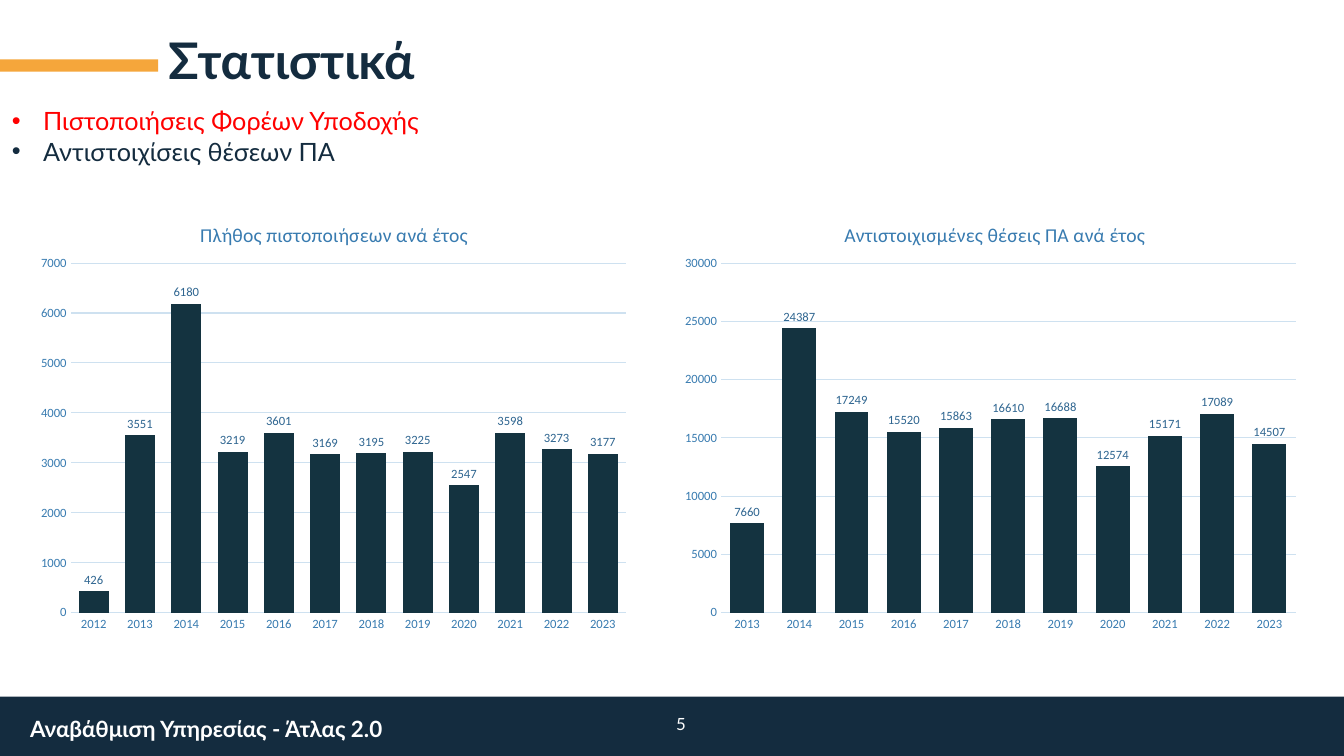
from lxml.etree import SubElement
from pptx import Presentation
from pptx.chart.data import CategoryChartData
from pptx.dml.color import RGBColor
from pptx.enum.chart import XL_CHART_TYPE, XL_LABEL_POSITION, XL_TICK_MARK
from pptx.enum.shapes import MSO_SHAPE
from pptx.enum.text import MSO_ANCHOR, PP_ALIGN
from pptx.oxml import parse_xml
from pptx.oxml.ns import nsdecls, qn
from pptx.util import Inches, Pt

NAVY, ORANGE, WHITE, RED = "142C3F", "F5A63B", "FFFFFF", "FF0000"
BAR, AXIS_TEXT, LABEL_TEXT, GRID = "143340", "387BB0", "2E6590", "CEE1F0"
SLIDE_WIDTH, SLIDE_HEIGHT = 13.33, 7.5

CERTIFICATIONS = [426, 3551, 6180, 3219, 3601, 3169, 3195, 3225, 2547, 3598, 3273, 3177]
MATCHED_POSITIONS = [7660, 24387, 17249, 15520, 15863, 16610, 16688, 12574, 15171, 17089, 14507]


def color(code):
    return RGBColor.from_string(code)


def set_font(font, size, code, name="Lato", bold=False):
    font.size, font.name, font.bold = Pt(size), name, bold
    font.color.rgb = color(code)


def add_bar(page, left, top, width, height, fill):
    bar = page.shapes.add_shape(MSO_SHAPE.RECTANGLE, Inches(left), Inches(top),
                                Inches(width), Inches(height))
    bar.shadow.inherit = False
    bar.fill.solid()
    bar.fill.fore_color.rgb = color(fill)
    bar.line.fill.background()


def write(para, text, size=18, code=NAVY, bold=False, align=PP_ALIGN.LEFT,
          spacing=1.0, bullet=False):
    para.alignment = align
    para.line_spacing = spacing
    if bullet:
        properties = para._p.get_or_add_pPr()
        properties.set("marL", str(Inches(0.31)))
        properties.set("indent", str(-Inches(0.31)))
        SubElement(properties, qn("a:buFont")).set("typeface", "Arial")
        SubElement(properties, qn("a:buChar")).set("char", "•")
    span = para.add_run()
    span.text = text
    set_font(span.font, size, code, bold=bold)


def add_text_frame(page, left, top, width, height, anchor=MSO_ANCHOR.TOP):
    box = page.shapes.add_textbox(Inches(left), Inches(top), Inches(width), Inches(height))
    frame = box.text_frame
    frame.word_wrap = True
    frame.vertical_anchor = anchor
    return frame


def add_footer(page, top, height):
    add_bar(page, 0, top, SLIDE_WIDTH, height, NAVY)
    name = add_text_frame(page, 0.2, top + 0.14, 5.46, 0.37)
    write(name.paragraphs[0], "Αναβάθμιση Υπηρεσίας - Άτλας 2.0", size=16, code=WHITE, bold=True)
    number = add_text_frame(page, 6.44, top + 0.14, 0.46, 0.27, MSO_ANCHOR.MIDDLE)
    write(number.paragraphs[0], "5", size=12, code=WHITE, align=PP_ALIGN.RIGHT)


def add_header(page, top):
    accent_width = 1.57
    add_bar(page, 0, top + 0.25, accent_width, 0.12, ORANGE)
    title = add_text_frame(page, accent_width, top, 8.02, 0.57, MSO_ANCHOR.MIDDLE)
    write(title.paragraphs[0], "Στατιστικά", size=36, bold=True, spacing=0.9)


def add_topics(page, left, top, width, height):
    frame = add_text_frame(page, left, top, width, height)
    write(frame.paragraphs[0], "Πιστοποιήσεις Φορέων Υποδοχής", code=RED, bullet=True)
    write(frame.add_paragraph(), "Αντιστοιχίσεις θέσεων ΠΑ", bullet=True)


def place(part, **fractions):
    """Fix a chart part by fractions of the chart's size."""
    modes = '<c:layoutTarget val="inner"/>' if "w" in fractions else ""
    modes += '<c:xMode val="edge"/><c:yMode val="edge"/>'
    sizes = "".join(f'<c:{key} val="{value:.4f}"/>' for key, value in fractions.items())
    layout = parse_xml(f'<c:layout {nsdecls("c")}><c:manualLayout>{modes}{sizes}'
                       '</c:manualLayout></c:layout>')
    for old in part.findall(qn("c:layout")):
        part.remove(old)
    text = part.find(qn("c:tx"))
    part.insert(0 if text is None else part.index(text) + 1, layout)


def add_year_chart(page, left, top, width, height, title, first_year, values, axis_room):
    data = CategoryChartData()
    data.categories = [str(first_year + step) for step in range(len(values))]
    data.add_series("Series 1", values)
    chart = page.shapes.add_chart(XL_CHART_TYPE.COLUMN_CLUSTERED, Inches(left), Inches(top),
                                  Inches(width), Inches(height), data).chart
    set_font(chart.font, 10, NAVY, "Calibri")
    chart.has_legend = False
    chart.has_title = True
    chart.chart_title.include_in_layout = False
    para = chart.chart_title.text_frame.paragraphs[0]
    span = para.add_run()
    span.text = title
    set_font(span.font, 14, AXIS_TEXT, "Calibri")

    for axis in (chart.category_axis, chart.value_axis):
        axis.major_tick_mark = axis.minor_tick_mark = XL_TICK_MARK.NONE
        set_font(axis.tick_labels.font, 9, AXIS_TEXT, "Calibri")
    chart.value_axis.format.line.fill.background()
    chart.value_axis.has_major_gridlines = True
    for ruled in (chart.category_axis, chart.value_axis.major_gridlines):
        ruled.format.line.color.rgb = color(GRID)
        ruled.format.line.width = Pt(0.75)

    plot = chart.plots[0]
    plot.gap_width, plot.overlap, plot.vary_by_categories = 54, -27, False
    series = plot.series[0]
    series.format.fill.solid()
    series.format.fill.fore_color.rgb = color(BAR)
    labels = series.data_labels
    labels.show_value = True
    labels.position = XL_LABEL_POSITION.OUTSIDE_END
    set_font(labels.font, 9, LABEL_TEXT, "Calibri")

    place(chart.chart_title._element, x=1.67 / width, y=0.2 / height)
    place(chart._chartSpace.chart.plotArea, x=axis_room / width, y=0.65 / height,
          w=(width - axis_room - 0.13) / width, h=3.47 / height)


def main():
    deck = Presentation()
    deck.slide_width, deck.slide_height = Inches(SLIDE_WIDTH), Inches(SLIDE_HEIGHT)
    page = deck.slides.add_slide(deck.slide_layouts[6])
    add_footer(page, 6.91, SLIDE_HEIGHT - 6.91)
    add_header(page, 0.34)
    add_topics(page, 0.02, 1, 4.52, 0.71)
    add_year_chart(page, 0.28, 1.96, 6.06, 4.4, "Πλήθος πιστοποιήσεων ανά έτος",
                   2012, CERTIFICATIONS, axis_room=0.42)
    add_year_chart(page, 6.67, 1.96, 6.31, 4.4, "Αντιστοιχισμένες θέσεις ΠΑ ανά έτος",
                   2013, MATCHED_POSITIONS, axis_room=0.48)
    deck.save("out.pptx")


if __name__ == "__main__":
    main()
